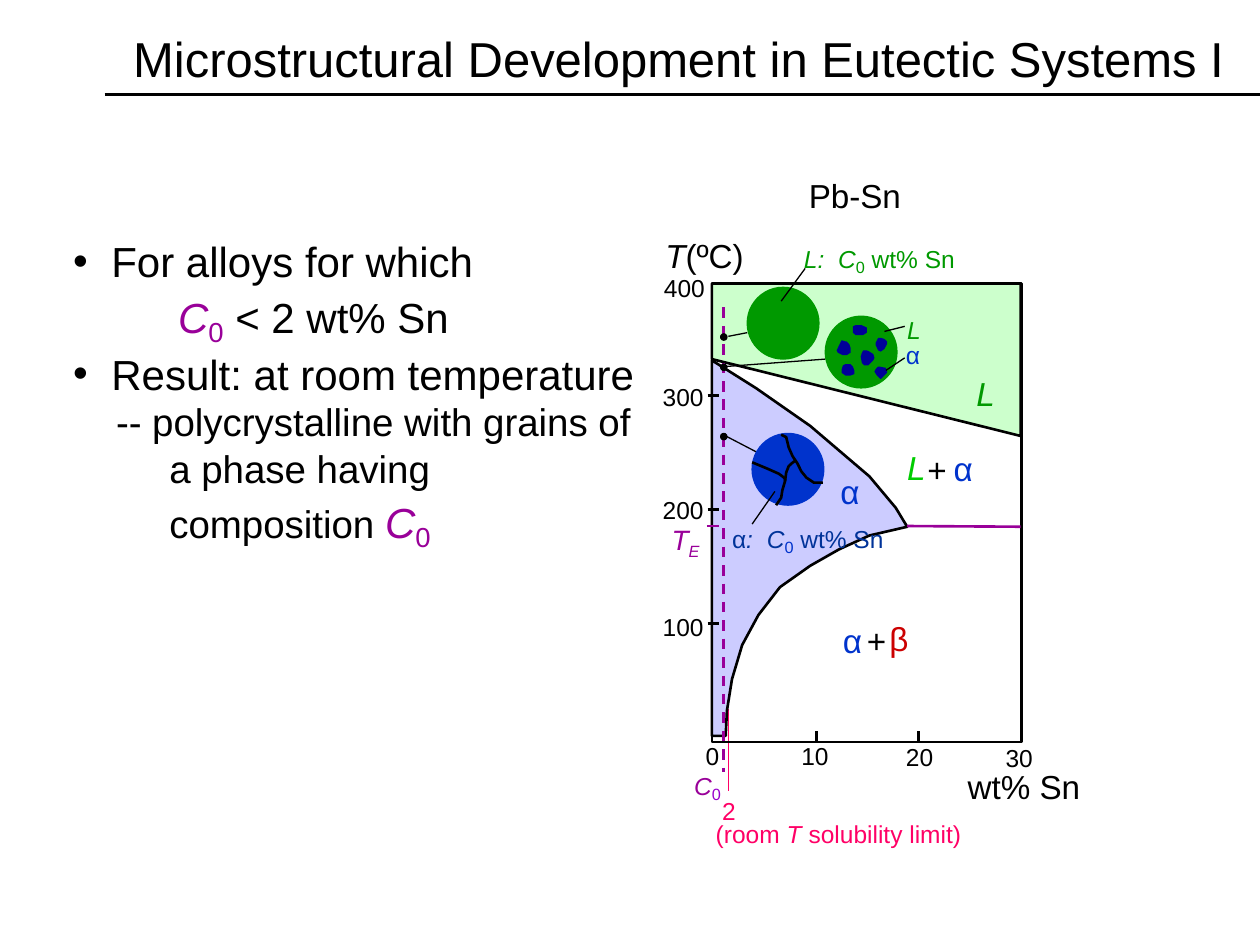
from dataclasses import dataclass
from itertools import starmap

from lxml.etree import SubElement
from pptx import Presentation
from pptx.dml.color import RGBColor
from pptx.enum.dml import MSO_LINE
from pptx.enum.shapes import MSO_CONNECTOR, MSO_SHAPE
from pptx.enum.text import MSO_ANCHOR, MSO_AUTO_SIZE, PP_ALIGN
from pptx.oxml.ns import qn
from pptx.util import Pt


@dataclass(frozen=True)
class Theme:
    font: str = "Arial"
    black: str = "000000"
    purple: str = "990099"
    violet: str = "9900CC"
    pink: str = "FF0066"
    green: str = "009900"
    bright_green: str = "00CC00"
    pale_green: str = "CCFFCC"
    blue: str = "0033CC"
    deep_blue: str = "003399"
    navy: str = "000099"
    lilac: str = "CCCCFF"
    red: str = "CC0000"
    title: float = 28
    body: float = 24
    detail: float = 22
    body_sub: float = 27
    phase: float = 19
    eutectic: float = 16
    small: float = 14
    small_sub: float = 16
    thin: float = 0.75
    medium: float = 1.5
    thick: float = 2.25


T = Theme()


@dataclass(frozen=True)
class Run:
    text: str
    size: float = T.small
    color: str = T.black
    italic: bool = False
    baseline: int = 0
    spacing: float = 0


@dataclass(frozen=True)
class Label:
    x: float
    y: float
    w: float
    runs: tuple[Run, ...]


@dataclass(frozen=True)
class Line:
    x1: float
    y1: float
    x2: float
    y2: float
    color: str = T.black
    width: float = T.thin
    dashed: bool = False


@dataclass(frozen=True)
class BodyLine:
    runs: tuple[Run, ...]
    left: float
    bullet: bool = False


def rgb(color: str) -> RGBColor:
    return RGBColor.from_string(color)


def add_run(p, run: Run) -> None:
    r = p.add_run()
    r.text = run.text
    r.font.name, r.font.size = T.font, Pt(run.size)
    r.font.italic = run.italic
    r.font.color.rgb = rgb(run.color)
    rPr = r._r.get_or_add_rPr()
    if run.baseline:
        rPr.set("baseline", str(run.baseline * 1000))
    if run.spacing:
        rPr.set("spc", str(int(run.spacing * 100)))


def add_label(shapes, label: Label) -> None:
    height = 1.21 * max(run.size for run in label.runs if not run.baseline)
    sp = shapes.add_textbox(Pt(label.x), Pt(label.y), Pt(label.w), Pt(height))
    tf = sp.text_frame
    tf.margin_left = tf.margin_right = tf.margin_top = tf.margin_bottom = 0
    tf.word_wrap = False
    tf.auto_size = MSO_AUTO_SIZE.SHAPE_TO_FIT_TEXT
    for run in label.runs:
        add_run(tf.paragraphs[0], run)


def add_line(shapes, line: Line) -> None:
    c = shapes.add_connector(MSO_CONNECTOR.STRAIGHT, Pt(line.x1), Pt(line.y1), Pt(line.x2), Pt(line.y2))
    c.line.color.rgb, c.line.width = rgb(line.color), Pt(line.width)
    if line.dashed:
        c.line.dash_style = MSO_LINE.DASH
    SubElement(c._element.spPr, qn("a:effectLst"))


def paint(sp, fill: str | None, line: str | None, width: float) -> None:
    sp.shadow.inherit = False
    if fill:
        sp.fill.solid()
        sp.fill.fore_color.rgb = rgb(fill)
    else:
        sp.fill.background()
    if line:
        sp.line.color.rgb, sp.line.width = rgb(line), Pt(width)
    else:
        sp.line.fill.background()


def add_outline(shapes, points, fill: str | None = None, line: str | None = T.black) -> None:
    """Filled outlines are closed; unfilled ones stay open."""
    start, *rest = [(Pt(x), Pt(y)) for x, y in points]
    builder = shapes.build_freeform(*start, scale=1.0)
    builder.add_line_segments(rest, close=fill is not None)
    paint(builder.convert_to_shape(), fill, line, T.medium)


def add_disc(shapes, x: float, y: float, color: str, size: float = 41) -> None:
    sp = shapes.add_shape(MSO_SHAPE.OVAL, Pt(x), Pt(y), Pt(size), Pt(size))
    paint(sp, color, color, T.thin)


def add_state_point(shapes, y: float) -> None:
    add_disc(shapes, 411.8, y, T.black, 3.6)


def phase(x: float, y: float, text: str, color: str, italic: bool = False) -> Label:
    return Label(x, y, 14.8, (Run(text, T.phase, color, italic),))


def composition(name: Run, color: str, sub_color: str) -> tuple[Run, ...]:
    """Runs for a phase name followed by its composition."""
    return (name, Run(":", color=color, italic=True),
            Run(" ", color=color, italic=True, spacing=3.9),
            Run("C", color=color, italic=True),
            Run("0", T.small_sub, sub_color, baseline=-19),
            Run(" wt% Sn", color=color))


ALPHA_FIELD = [(406.8, 205.9), (432, 221.8), (463, 243.4), (496.8, 272.2), (511.9, 290.2), (518.4, 301),
               (496.8, 306), (479.5, 313.9), (463, 323.3), (445.7, 335.5), (433.4, 351.4), (424.1, 368.6),
               (418.3, 388.1), (415.4, 406.1), (414.7, 420.5), (406.8, 420.5)]
LIQUID_FIELD = [(406.8, 205.2), (406.8, 162), (583.2, 162), (583.2, 249.1)]
GRAINS = [
    [(491, 185.8), (488.9, 185.8), (487.4, 186.5), (487.4, 190.1), (488.9, 191.5), (493.2, 191.5),
     (495.4, 190.1), (495.4, 187.2), (493.9, 186.5), (492.5, 185.8)],
    [(501.8, 193), (500.4, 195.8), (500.4, 197.3), (501.8, 200.2), (503.3, 200.9), (505.4, 199.4),
     (506.9, 196.6), (506.9, 195.1), (505.4, 193.7), (503.3, 193)],
    [(496.8, 200.9), (495.4, 200.2), (493.2, 200.2), (492.5, 201.6), (491.8, 203.8), (492.5, 207.4),
     (493.9, 208.8), (496.1, 208.8), (499, 205.9), (499.7, 204.5), (499, 202.3)],
    [(506.2, 210.2), (502.6, 209.5), (501.8, 209.5), (500.4, 211), (499.7, 212.4), (501.1, 214.6),
     (503.3, 216.7), (505.4, 214.6), (506.9, 213.1), (506.9, 211.7)],
    [(487.4, 209.5), (486, 208.1), (483.1, 208.1), (481.7, 208.8), (481, 211), (481, 213.1),
     (483.1, 214.6), (486, 214.6), (488.2, 213.8), (488.2, 211.7)],
    [(483.1, 195.1), (481, 194.4), (480.2, 195.8), (478.1, 200.2), (478.8, 201.6), (481.7, 203),
     (483.8, 203), (486, 201.6), (486, 198.7), (485.3, 196.6), (483.8, 195.1)],
]
GRAIN_BOUNDARIES = [
    [(446.4, 248.4), (449.3, 249.8), (450.7, 255.6), (452.9, 260.6), (455.8, 265), (457.9, 269.3),
     (460.8, 272.9), (465.1, 275.8), (470.2, 275.8)],
    [(455, 262.8), (452.2, 265), (450.7, 266.4), (449.3, 270), (448.6, 275), (447.1, 280.1),
     (446.4, 284.4), (445, 286.6), (443.5, 288.7)],
    [(429.8, 264.2), (433.4, 265.7), (438.5, 267.8), (445, 270.7), (447.1, 272.2), (448.6, 273.6), (448.6, 275)],
]
C0 = (Run("C", T.body, T.purple, True), Run("0", T.body_sub, T.purple, baseline=-20))
BODY = [
    BodyLine((Run("For alloys for which", T.body),), 21.8, True),
    BodyLine((*C0, Run(" < 2 wt% Sn", T.body)), 60),
    BodyLine((Run("Result: at room temperature", T.body),), 21.8, True),
    BodyLine((Run("-- polycrystalline with grains of", T.detail),), 24.5),
    BodyLine((Run("a phase having", T.detail),), 55),
    BodyLine((Run("composition ", T.detail), *C0), 55),
]
DIAGRAM_LABELS = [
    *starmap(phase, [(518.4, 255.6, "L", T.bright_green, True), (529.9, 257, "+", T.black),
                     (545, 256.3, "α", T.blue), (558, 213.1, "L", T.green, True),
                     (480.2, 269.3, "α", T.blue), (481.7, 354.2, "α", T.blue),
                     (495.4, 354.2, "+", T.black), (508.3, 353.5, "β", T.red)]),
    *(Label(x, y, w, (Run(text),)) for x, y, w, text in [
        (403.2, 423.4, 10.8, "0"), (457.9, 423.4, 18.7, "10"), (517.7, 424.1, 18.7, "20"),
        (574.6, 424.8, 18.7, "30"), (379.4, 156.2, 26.6, "400"), (378.7, 218.2, 26.6, "300"),
        (378.7, 283, 26.6, "200"), (378.7, 349.9, 26.6, "100")]),
    Label(380.2, 134.6, 50.4, (Run("T", T.phase, italic=True), Run("(ºC)", T.phase))),
    Label(553, 437.8, 69.8, (Run("wt% Sn", T.phase),)),
    Label(462.2, 100.1, 56.9, (Run("Pb-Sn", T.phase),)),
    Label(412.6, 455, 10.8, (Run("2", color=T.pink),)),
    Label(396.7, 438.5, 17.3, (Run("C", color=T.purple, italic=True),
                               Run("0", T.small_sub, T.violet, baseline=-19))),
    Label(409, 468, 144, (Run("(room ", color=T.pink), Run("T", color=T.pink, italic=True),
                          Run(" solubility limit)", color=T.pink))),
    Label(383.8, 298.8, 20.9, (Run("T", T.eutectic, T.purple, True),
                               Run("E", T.eutectic, T.purple, True, -25))),
]
DIAGRAM_LINES = [
    *(Line(x, 423.7, x, 417.6, width=T.medium) for x in (466.6, 524.9)),
    *(Line(404.4, y, 410.9, y, width=T.medium) for y in (226.1, 291.2, 356.4)),
    Line(518.4, 300.6, 583.2, 301, T.purple, T.medium),
    Line(403.9, 300.6, 411.1, 300.6, T.purple, T.medium),
    Line(413.3, 175.7, 413.3, 441.4, T.purple, T.medium, True),
]


def fill_title(title) -> None:
    title.left, title.top, title.width, title.height = Pt(55.4), Pt(12.2), Pt(664.6), Pt(41.8)
    tf = title.text_frame
    tf.vertical_anchor = MSO_ANCHOR.MIDDLE
    tf.paragraphs[0].alignment = PP_ALIGN.CENTER
    add_run(tf.paragraphs[0], Run("Microstructural Development in Eutectic Systems I", T.title))


def fill_body(body) -> None:
    body.left, body.top, body.width, body.height = Pt(41.8), Pt(134.6), Pt(330.5), Pt(169.9)
    tf = body.text_frame
    tf.margin_left = tf.margin_right = tf.margin_top = tf.margin_bottom = 0
    tf.auto_size = MSO_AUTO_SIZE.NONE
    for i, line in enumerate(BODY):
        p = tf.add_paragraph() if i else tf.paragraphs[0]
        p.space_before = Pt(0)
        pPr = p._p.get_or_add_pPr()
        pPr.set("marL", str(Pt(line.left)))
        pPr.set("indent", str(Pt(-line.left) if line.bullet else 0))
        if line.bullet:
            SubElement(pPr, qn("a:buChar"), char="•")
        else:
            SubElement(pPr, qn("a:buNone"))
        for run in line.runs:
            add_run(p, run)


def draw_diagram(shapes) -> None:
    add_line(shapes, Line(416.2, 405.4, 416.2, 452.2, T.pink))
    add_outline(shapes, ALPHA_FIELD, T.lilac)
    add_outline(shapes, LIQUID_FIELD, T.pale_green)
    frame = shapes.add_shape(MSO_SHAPE.RECTANGLE, Pt(406.8), Pt(162), Pt(177.1), Pt(262.1))
    paint(frame, None, T.black, T.medium)
    for line in DIAGRAM_LINES:
        add_line(shapes, line)
    for label in DIAGRAM_LABELS:
        add_label(shapes, label)


def draw_two_phase_state(shapes) -> None:
    add_line(shapes, Line(414, 209.5, 471.6, 205.2))
    add_disc(shapes, 471.6, 180.7, T.green)
    for grain in GRAINS:
        add_outline(shapes, grain, T.navy, None)
    add_line(shapes, Line(505.4, 189.4, 517, 186.5))
    add_line(shapes, Line(506.2, 211.7, 517, 204.5))
    add_label(shapes, Label(518.4, 180, 11.5, (Run("L", color=T.green, italic=True),)))
    add_label(shapes, Label(517.7, 194.4, 10.8, (Run("α", color=T.blue),)))
    add_state_point(shapes, 208.1)


def draw_liquid_state(shapes) -> None:
    add_disc(shapes, 427, 164.2, T.green)
    name = Run("L", color=T.green, italic=True)
    add_label(shapes, Label(459.4, 137.5, 91.4, composition(name, T.green, T.green)))
    add_line(shapes, Line(416.2, 192.2, 427, 190.1))
    add_line(shapes, Line(446.4, 172.1, 460.1, 153.4))
    add_state_point(shapes, 190.8)


def draw_solid_state(shapes) -> None:
    name = Run("α", color=T.deep_blue)
    add_label(shapes, Label(418.3, 297.4, 87.8, composition(name, T.deep_blue, T.blue)))
    add_line(shapes, Line(413.3, 248.4, 432.7, 258.5))
    add_disc(shapes, 429.8, 247.7, T.blue)
    for boundary in GRAIN_BOUNDARIES:
        add_outline(shapes, boundary)
    add_line(shapes, Line(429.8, 299.5, 442.8, 280.8))
    add_state_point(shapes, 247.7)


def main() -> None:
    prs = Presentation()
    prs.slide_width, prs.slide_height = Pt(720), Pt(540)
    s = prs.slides.add_slide(prs.slide_layouts[1])
    fill_title(s.shapes.title)
    fill_body(s.placeholders[1])
    add_line(s.shapes, Line(59.8, 54, 720, 54, width=T.thick))
    for draw in (draw_diagram, draw_two_phase_state, draw_liquid_state, draw_solid_state):
        draw(s.shapes.add_group_shape().shapes)
    prs.save("out.pptx")


if __name__ == "__main__":
    main()
